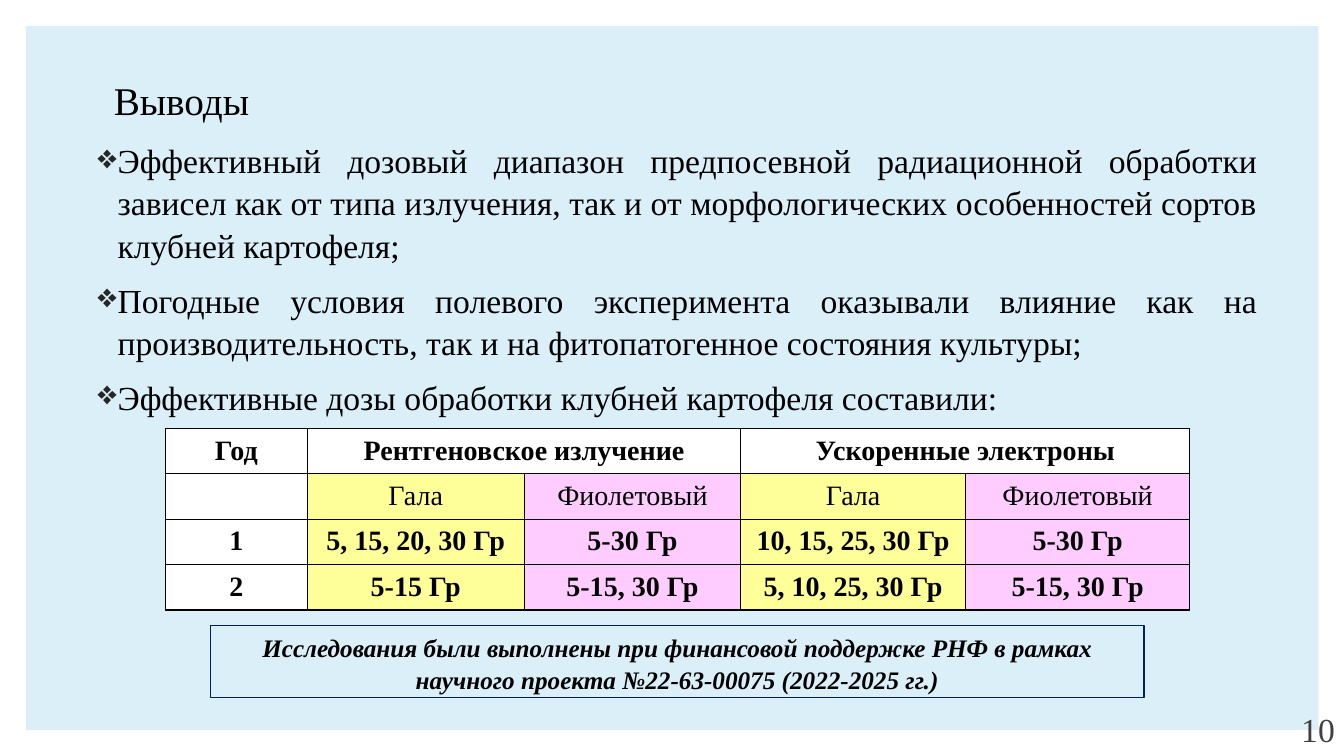
import pptx
import pptx.dml.color
import pptx.enum.shapes
import pptx.enum.text
import pptx.oxml.ns
import pptx.util
from lxml import etree

Pt = pptx.util.Pt
Align = pptx.enum.text.PP_ALIGN
Anchor = pptx.enum.text.MSO_ANCHOR
WHITE, YELLOW, PINK = "FFFFFF", "FFFF99", "FFCCFF"


def color(code):
    return pptx.dml.color.RGBColor.from_string(code)


def child(node, tag, **attrs):
    return etree.SubElement(node, pptx.oxml.ns.qn(tag), attrs)


def write(frame, *lines, size=24, ink="000000", bold=False, italic=False,
          align=Align.LEFT, anchor=Anchor.TOP, lead=1.05, gap=0, mark=None):
    """Fill a text frame, one paragraph per line; mark is a bullet sign."""
    frame.word_wrap = True
    frame.vertical_anchor = anchor
    for num, line in enumerate(lines):
        para = frame.paragraphs[0] if num == 0 else frame.add_paragraph()
        para.alignment = align
        para.line_spacing = lead
        if num:
            para.space_before = Pt(gap)
        if mark:
            props = para._p.get_or_add_pPr()
            props.set("marL", str(Pt(14.4)))
            props.set("indent", str(-Pt(14.4)))
            child(child(props, "a:buClr"), "a:srgbClr", val="262626")
            child(props, "a:buChar", char=mark)
        run = para.add_run()
        run.text = line
        font = run.font
        font.name, font.size = "Times New Roman", Pt(size)
        font.bold, font.italic = bold, italic
        font.color.rgb = color(ink)


class Page:
    def __init__(self, deck):
        self.slide = deck.slides.add_slide(deck.slide_layouts[6])
        self.shapes = self.slide.shapes

    def rect(self, box, fill=None, line=None):
        shape = self.shapes.add_shape(
            pptx.enum.shapes.MSO_SHAPE.RECTANGLE, *map(Pt, box))
        shape.shadow.inherit = False
        if fill:
            shape.fill.solid()
            shape.fill.fore_color.rgb = color(fill)
        else:
            shape.fill.background()
        if line:
            shape.line.color.rgb = color(line)
            shape.line.width = Pt(0.75)
        else:
            shape.line.fill.background()
        return shape

    def text(self, box, *lines, **style):
        write(self.shapes.add_textbox(*map(Pt, box)).text_frame, *lines, **style)

    def cell(self, cell, fill, text, bold):
        props = cell._tc.get_or_add_tcPr()
        for side in ("a:lnL", "a:lnR", "a:lnT", "a:lnB"):
            edge = child(props, side, w=str(Pt(1)))
            child(child(edge, "a:solidFill"), "a:srgbClr", val="000000")
        cell.fill.solid()
        cell.fill.fore_color.rgb = color(fill)
        if text:
            write(cell.text_frame, text, size=20, bold=bold, align=Align.CENTER)

    def table(self, left, top, cols, high, rows, fills, spans, plain):
        """Draw rows; spans are header columns two wide, plain a row not bold."""
        grid = self.shapes.add_table(
            len(rows), len(cols), Pt(left), Pt(top),
            Pt(sum(cols)), Pt(high * len(rows))).table
        for col, wide in zip(grid.columns, cols):
            col.width = Pt(wide)
        for y, row in enumerate(rows):
            grid.rows[y].height = Pt(high)
            for x, text in enumerate(row):
                fill = fills[x] if y else WHITE
                self.cell(grid.cell(y, x), fill, text, y != plain)
        for x in spans:
            grid.cell(0, x).merge(grid.cell(0, x + 1))


def main():
    deck = pptx.Presentation()
    deck.slide_width, deck.slide_height = Pt(960), Pt(540)
    page = Page(deck)
    page.rect((18.7, 18.7, 923, 502.6), fill="DBEFF9")
    page.text((74.2, 28.1, 676.8, 85), "Выводы", size=28, anchor=Anchor.MIDDLE)
    page.text((839.5, 512.6, 121, 26), "10", ink="404040", lead=1,
              align=Align.RIGHT, anchor=Anchor.BOTTOM)
    page.text(
        (62.6, 95, 842.4, 392.4),
        "Эффективный дозовый диапазон предпосевной радиационной обработки "
        "зависел как от типа излучения, так и от морфологических особенностей "
        "сортов клубней картофеля;",
        "Погодные условия полевого эксперимента оказывали влияние как на "
        "производительность, так и на фитопатогенное состояния культуры;",
        "Эффективные дозы обработки клубней картофеля составили:",
        align=Align.JUSTIFY, gap=9, mark="❖")
    note = page.rect((150.5, 447.1, 666.7, 51.1), line="002060")
    write(note.text_frame,
          "Исследования были выполнены при финансовой поддержке РНФ в рамках "
          "научного проекта №22-63-00075 (2022-2025 гг.)",
          size=18, bold=True, italic=True, align=Align.CENTER)
    page.table(
        118.1, 306, (101.5, 154.8, 154.8, 160.4, 160.4), 31.2,
        (("Год", "Рентгеновское излучение", "", "Ускоренные электроны", ""),
         ("", "Гала", "Фиолетовый", "Гала", "Фиолетовый"),
         ("1", "5, 15, 20, 30 Гр", "5-30 Гр", "10, 15, 25, 30 Гр", "5-30 Гр"),
         ("2", "5-15 Гр", "5-15, 30 Гр", "5, 10, 25, 30 Гр", "5-15, 30 Гр")),
        fills=(WHITE, YELLOW, PINK, YELLOW, PINK), spans=(1, 3), plain=1)
    deck.save("out.pptx")


if __name__ == "__main__":
    main()
